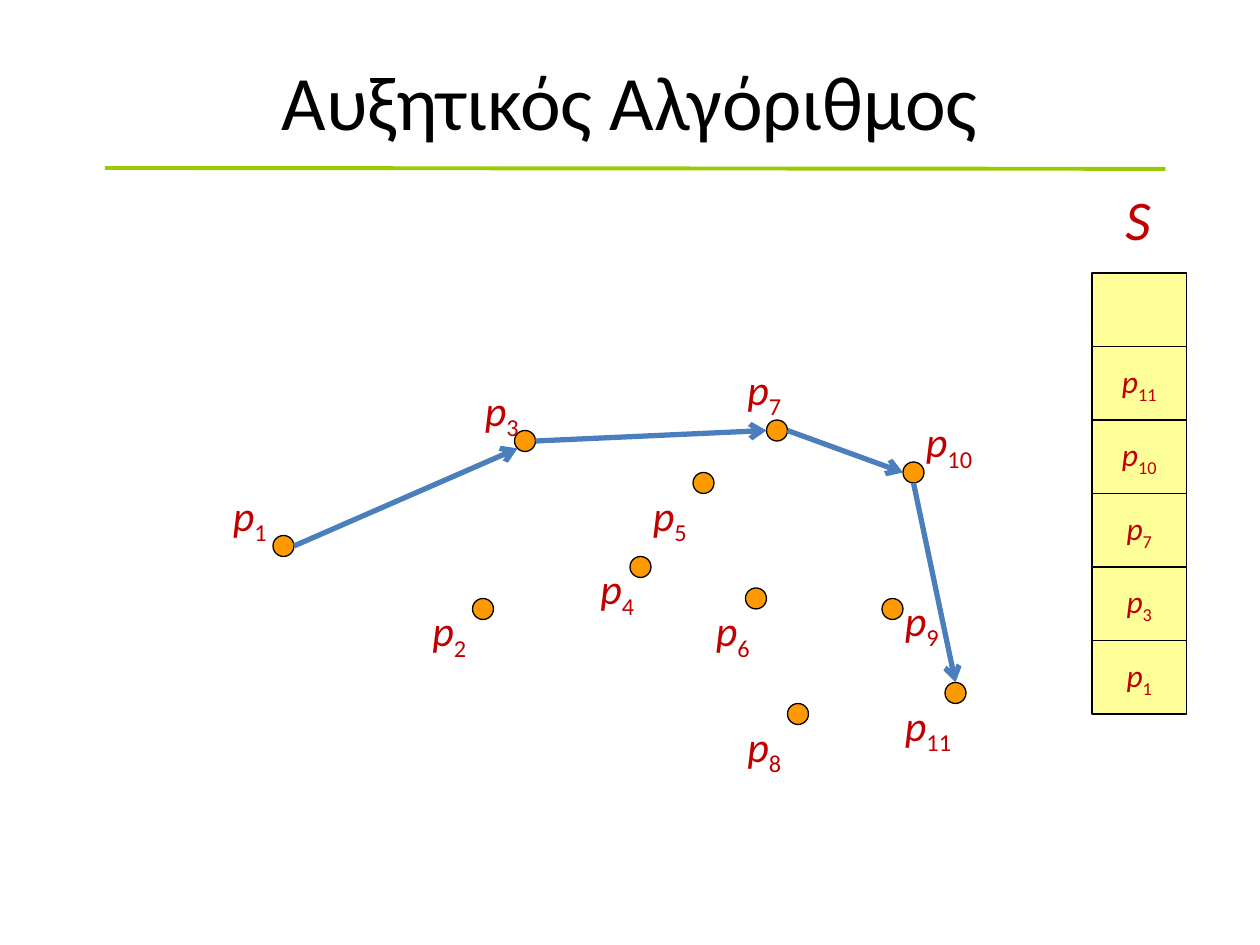
from itertools import pairwise

from pptx import Presentation
from pptx.dml.color import RGBColor
from pptx.enum.shapes import MSO_CONNECTOR, MSO_SHAPE
from pptx.enum.text import MSO_ANCHOR, MSO_AUTO_SIZE, PP_ALIGN
from pptx.oxml.ns import qn
from pptx.util import Pt
from lxml import etree

COLORS = {
    "title": "000000",
    "outline": "000000",
    "label": "C00000",
    "dot": "FF9900",
    "cell": "FFFF99",
    "rule": "99CC00",
    "edge": "4B7EBC",
}
FONT = "Calibri"
DOT_SIZE = 12

# point number: (dot left, dot top, label left, label top)
POINTS = {
    1: (156, 306, 126, 276),
    2: (270, 342, 240, 342),
    3: (294, 246, 270, 216),
    4: (360, 318, 336, 318),
    5: (396, 270, 366, 276),
    6: (426, 336, 402, 342),
    7: (438, 240, 420, 204),
    8: (450, 402, 420, 408),
    9: (504, 342, 510, 336),
    10: (516, 264, 522, 234),
    11: (540, 390, 510, 396),
}
HULL = [1, 3, 7, 10, 11]
ANCHORS = {
    "left": (0, 6),
    "right": (12, 6),
    "top": (6, 0),
    "bottom": (6, 12),
    "bottom left": (1.76, 10.24),
}
EDGE_ANCHORS = [
    ("right", "bottom left"),
    ("right", "left"),
    ("right", "left"),
    ("bottom", "top"),
]


def color(name):
    return RGBColor.from_string(COLORS[name])


def style_paragraph(paragraph, size, color_name, alignment=PP_ALIGN.LEFT):
    paragraph.alignment = alignment
    paragraph.font.name = FONT
    paragraph.font.size = Pt(size)
    paragraph.font.color.rgb = color(color_name)


def add_symbol(paragraph, letter, subscript=""):
    run = paragraph.add_run()
    run.text = letter
    run.font.italic = True
    if subscript:
        run = paragraph.add_run()
        run.text = str(subscript)
        run.font._element.set("baseline", "-25000")


def add_text_box(slide, left, top, width, height, wrap=True):
    frame = slide.shapes.add_textbox(Pt(left), Pt(top), Pt(width), Pt(height)).text_frame
    frame.word_wrap = wrap
    return frame


def add_title(slide, text):
    frame = add_text_box(slide, 54, 12, 612, 90)
    frame.vertical_anchor = MSO_ANCHOR.MIDDLE
    paragraph = frame.paragraphs[0]
    paragraph.text = text
    style_paragraph(paragraph, 44, "title", PP_ALIGN.CENTER)


def add_label(slide, left, top, width, height, size, letter, subscript="", wrap=False):
    frame = add_text_box(slide, left, top, width, height, wrap)
    frame.auto_size = MSO_AUTO_SIZE.SHAPE_TO_FIT_TEXT
    paragraph = frame.paragraphs[0]
    style_paragraph(paragraph, size, "label")
    add_symbol(paragraph, letter, subscript)


def add_box(slide, kind, left, top, width, height, fill):
    shape = slide.shapes.add_shape(kind, Pt(left), Pt(top), Pt(width), Pt(height))
    shape.shadow.inherit = False
    shape.fill.solid()
    shape.fill.fore_color.rgb = color(fill)
    shape.line.color.rgb = color("outline")
    shape.line.width = Pt(0.75)
    return shape


def add_line(slide, start, end, color_name, width, arrow=False):
    line = slide.shapes.add_connector(
        MSO_CONNECTOR.STRAIGHT, *(Pt(value) for value in (*start, *end))
    )
    line.line.color.rgb = color(color_name)
    line.line.width = Pt(width)
    if arrow:
        etree.SubElement(line.line._get_or_add_ln(), qn("a:tailEnd"), type="arrow")
    etree.SubElement(line._element.spPr, qn("a:effectLst"))


def add_points(slide):
    for number, (left, top, label_left, label_top) in POINTS.items():
        add_box(slide, MSO_SHAPE.OVAL, left, top, DOT_SIZE, DOT_SIZE, "dot")
        label_width = 35 if number < 10 else 43
        add_label(slide, label_left, label_top, label_width, 36, 24, "p", number)


def anchor_position(number, anchor):
    left, top = POINTS[number][:2]
    across, down = ANCHORS[anchor]
    return left + across, top + down


def add_hull(slide):
    for (first, second), (leave, arrive) in zip(pairwise(HULL), EDGE_ANCHORS):
        start = anchor_position(first, leave)
        end = anchor_position(second, arrive)
        add_line(slide, start, end, "edge", 3, arrow=True)


def add_stack(slide):
    add_label(slide, 636, 102, 32, 46, 32, "S", wrap=True)
    for row, number in enumerate([None, *reversed(HULL)]):
        cell = add_box(slide, MSO_SHAPE.RECTANGLE, 624, 156 + 42 * row, 54, 42, "cell")
        if number:
            frame = cell.text_frame
            frame.word_wrap = False
            frame.vertical_anchor = MSO_ANCHOR.MIDDLE
            paragraph = frame.paragraphs[0]
            style_paragraph(paragraph, 18, "label", PP_ALIGN.CENTER)
            add_symbol(paragraph, "p", number)


def main():
    presentation = Presentation()
    presentation.slide_width = Pt(720)
    presentation.slide_height = Pt(540)
    slide = presentation.slides.add_slide(presentation.slide_layouts[6])
    add_title(slide, "Αυξητικός Αλγόριθμος")
    add_line(slide, (60, 96), (666, 96.5), "rule", 2.25)
    add_points(slide)
    add_hull(slide)
    add_stack(slide)
    presentation.save("out.pptx")


if __name__ == "__main__":
    main()
